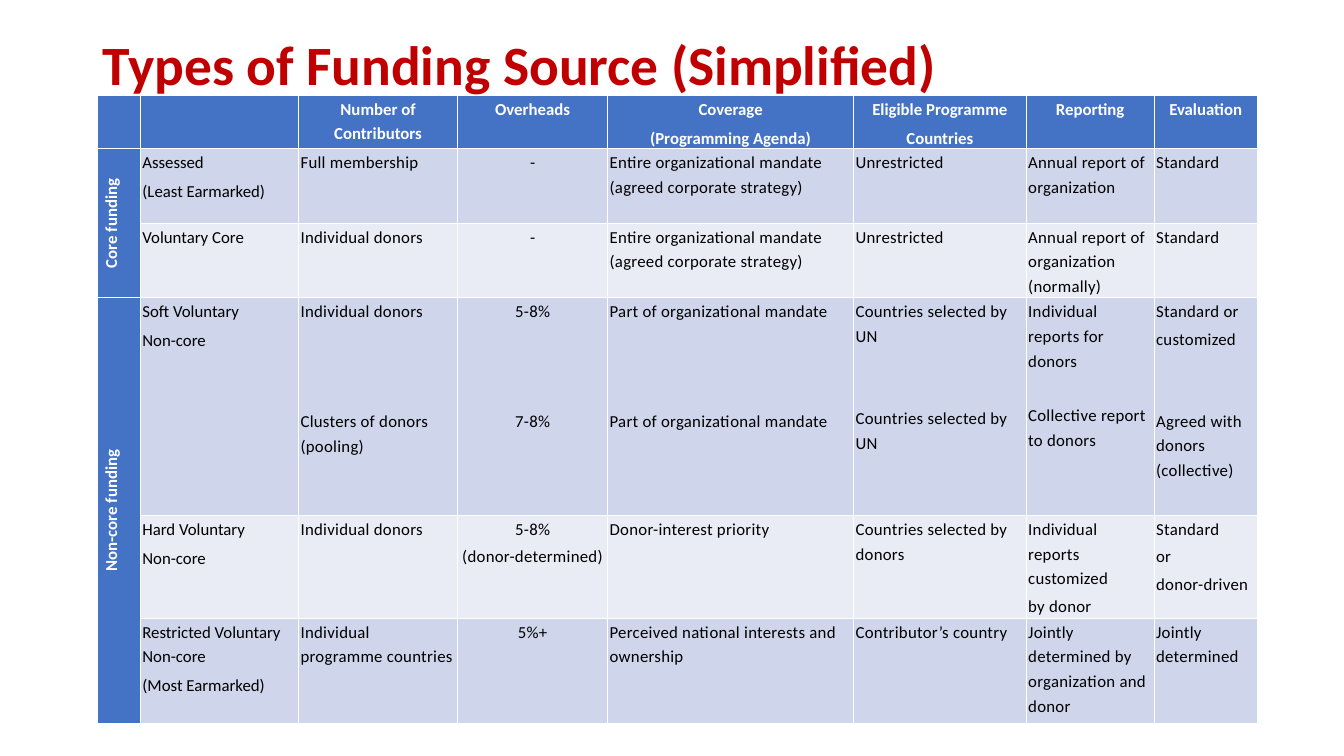
from dataclasses import dataclass

from pptx import Presentation as Deck
from pptx.dml.color import RGBColor as Color
from pptx.enum.text import MSO_AUTO_SIZE as Fit, MSO_ANCHOR as Anchor, PP_ALIGN as Align
from pptx.oxml.ns import qn
from pptx.table import Table, _Cell as Cell
from pptx.util import Pt

HUES = {"title": "C00000", "head": "4472C4", "dark": "CFD5EA",
        "light": "E9EBF5", "white": "FFFFFF", "black": "000000"}
FONT = "Calibri"
PITCH = 19.57  # one line of body text with its spacing


@dataclass
class Col:
    width: float
    head: str = ""
    mid: bool = False


@dataclass
class Row:
    height: float
    cells: list[str]


@dataclass
class Group:
    name: str
    first: int
    last: int


@dataclass
class Style:
    fill: str
    ink: str = "black"
    bold: bool = False
    mid: bool = False
    before: float = 0
    after: float = 3
    track: int = 0  # hundredths of a point


COLS = [
    Col(30.9),
    Col(113),
    Col(113.6, "Number of Contributors"),
    Col(107.2, "Overheads", mid=True),
    Col(175.7, "Coverage\n(Programming Agenda)"),
    Col(123.3, "Eligible Programme\nCountries"),
    Col(91.4, "Reporting"),
    Col(73.7, "Evaluation"),
]
HEAD = 38.2

# A new line starts a paragraph
ROWS = [
    Row(53.3, ["Assessed\n(Least Earmarked)", "Full membership", "-",
               "Entire organizational mandate (agreed corporate strategy)",
               "Unrestricted", "Annual report of organization", "Standard"]),
    Row(53.3, ["Voluntary Core", "Individual donors", "-",
               "Entire organizational mandate (agreed corporate strategy)",
               "Unrestricted", "Annual report of organization (normally)", "Standard"]),
    Row(155.5, ["Soft Voluntary\nNon-core",
                "Individual donors\nClusters of donors (pooling)",
                "5-8%\n7-8%",
                "Part of organizational mandate\nPart of organizational mandate",
                "Countries selected by UN\nCountries selected by UN",
                "Individual reports for donors\nCollective report to donors",
                "Standard or\ncustomized\nAgreed with donors (collective)"]),
    Row(73.4, ["Hard Voluntary\nNon-core", "Individual donors",
               "5-8%\n(donor-determined)", "Donor-interest priority",
               "Countries selected by donors",
               "Individual reports customized\nby donor",
               "Standard\nor\ndonor-driven"]),
    Row(74.9, ["Restricted Voluntary Non-core\n(Most Earmarked)",
               "Individual programme countries", "5%+",
               "Perceived national interests and ownership",
               "Contributor’s country",
               "Jointly determined by organization and donor",
               "Jointly determined"]),
]
GROUPS = [Group("Core funding", 1, 2), Group("Non-core funding", 3, 5)]

# Lines skipped above the pooled-donor entry, by column of the soft row
SOFT = 3
SKIPS = {2: 3, 3: 3, 4: 3, 5: 2, 6: 1, 7: 2}


def hue(name: str) -> Color:
    return Color.from_string(HUES[name])


def write(cell: Cell, text: str, style: Style, skip: int = 0) -> None:
    """Fill a cell; skip is the gap in lines above its last paragraph."""
    cell.fill.solid()
    cell.fill.fore_color.rgb = hue(style.fill)
    cell.margin_left = cell.margin_right = Pt(1.44)
    cell.margin_top = cell.margin_bottom = Pt(0)
    cell.text = text
    paras = cell.text_frame.paragraphs
    for para in paras:
        para.alignment = Align.CENTER if style.mid else Align.LEFT
        para.line_spacing = 1.2
        para.space_before = Pt(style.before)
        para.space_after = Pt(style.after)
        font = para.font
        font.name, font.size, font.bold = FONT, Pt(12), style.bold
        font.color.rgb = hue(style.ink)
        if style.track:
            para._p.pPr.find(qn("a:defRPr")).set("spc", str(style.track))
    if skip:
        paras[-1].space_before = Pt(style.before + skip * PITCH)


def fill_head(table: Table) -> None:
    style = Style("head", "white", bold=True, mid=True)
    for at, col in enumerate(COLS):
        table.columns[at].width = Pt(col.width)
        write(table.cell(0, at), col.head, style)
    table.rows[0].height = Pt(HEAD)


def fill_body(table: Table) -> None:
    for line, row in enumerate(ROWS, 1):
        table.rows[line].height = Pt(row.height)
        fill = "dark" if line % 2 else "light"
        for at, text in enumerate(row.cells, 1):
            if at == 1:
                style = Style(fill)
            else:
                style = Style(fill, mid=COLS[at].mid, before=1, after=1, track=20)
            skip = SKIPS.get(at, 0) if line == SOFT else 0
            write(table.cell(line, at), text, style, skip)


def fill_side(table: Table) -> None:
    style = Style("head", "white", bold=True, mid=True)
    for group in GROUPS:
        cell = table.cell(group.first, 0)
        cell.merge(table.cell(group.last, 0))
        write(cell, group.name, style)
        cell._tc.get_or_add_tcPr().set("vert", "vert270")


def main() -> None:
    deck = Deck()
    deck.slide_width, deck.slide_height = Pt(960), Pt(540)
    slide = deck.slides.add_slide(deck.slide_layouts[5])

    # Funding table
    wide = sum(col.width for col in COLS)
    high = HEAD + sum(row.height for row in ROWS)
    table = slide.shapes.add_table(len(ROWS) + 1, len(COLS), Pt(69.4), Pt(68),
                                   Pt(wide), Pt(high)).table
    fill_head(table)
    fill_body(table)
    fill_side(table)

    # Title, in front of the table
    title = slide.shapes.title
    title.left, title.top, title.width, title.height = Pt(66), Pt(28.8), Pt(828), Pt(39.6)
    frame = title.text_frame
    frame.auto_size, frame.vertical_anchor = Fit.NONE, Anchor.MIDDLE
    frame.text = "Types of Funding Source (Simplified)"
    para = frame.paragraphs[0]
    para.alignment, para.line_spacing = Align.LEFT, 0.9
    para.font.name, para.font.size, para.font.bold = FONT, Pt(39.6), True
    para.font.color.rgb = hue("title")
    slide.shapes._spTree.append(title._element)

    deck.save("out.pptx")


if __name__ == "__main__":
    main()
